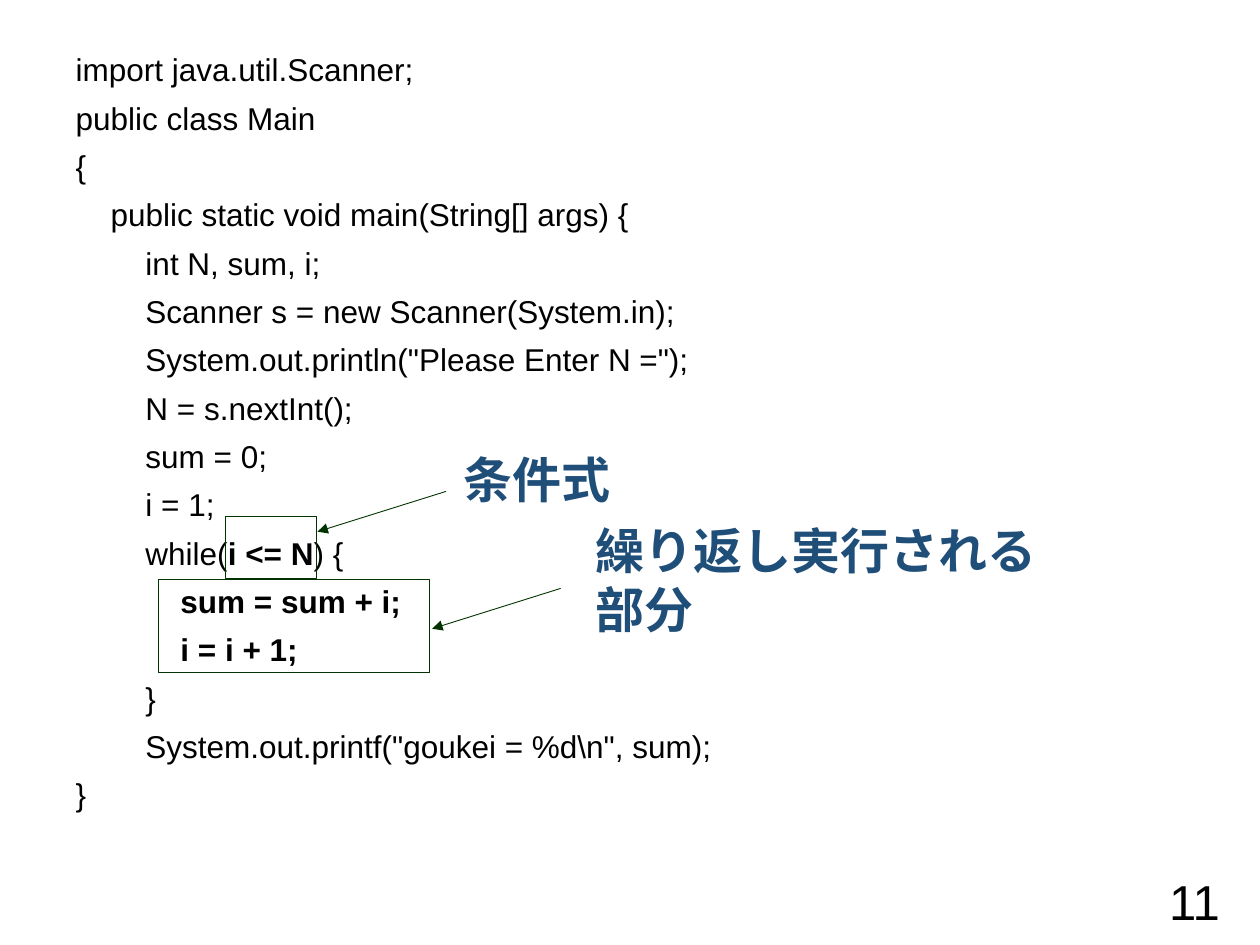
from pptx import Presentation
from pptx import util as u
from pptx.dml.color import RGBColor
from pptx.enum import shapes, text
from pptx.oxml.ns import qn
from lxml import etree

THEME = {
    "font": "Arial",
    "ink": RGBColor(0x00, 0x00, 0x00),
    "label": RGBColor(0x1F, 0x4E, 0x79),
    "frame": RGBColor(0x00, 0x33, 0x00),
    "code_size": u.Pt(18),
    "large_size": u.Pt(28),
    "line_width": u.Pt(0.5),
}


def add_run(paragraph, wording, size, color, bold=False):
    run = paragraph.add_run()
    run.text = wording
    run.font.name = THEME["font"]
    run.font.size = size
    run.font.bold = bold
    run.font.color.rgb = color


prs = Presentation()
prs.slide_width, prs.slide_height = u.Inches(10), u.Inches(7.5)
slide = prs.slides.add_slide(prs.slide_layouts[1])
unused_title = slide.shapes.title.element
unused_title.getparent().remove(unused_title)

# Program listing: each line is a list of (text, bold) runs
CODE = [
    [("import java.util.Scanner;", False)],
    [("public class Main", False)],
    [("{", False)],
    [("    public static void main(String[] args) {", False)],
    [("        int N, sum, i;", False)],
    [("        Scanner s = new Scanner(System.in);", False)],
    [("        System.out.println(\"Please Enter N =\");", False)],
    [("        N = s.nextInt();", False)],
    [("        sum = 0;", False)],
    [("        i = 1;", False)],
    [("        while(", False), ("i <= N", True), (") {", False)],
    [("            sum = sum + i;", True)],
    [("            i = i + 1;", True)],
    [("        }", False)],
    [("        System.out.printf(\"goukei = %d\\n\", sum);", False)],
    [("}", False)],
]
listing = slide.placeholders[1]
listing.left, listing.top = u.Inches(0.5), u.Inches(0.35)
listing.width, listing.height = u.Inches(9.25), u.Inches(5.83)
code_frame = listing.text_frame
code_frame.auto_size = text.MSO_AUTO_SIZE.NONE
code_frame.vertical_anchor = text.MSO_ANCHOR.TOP
for number, parts in enumerate(CODE):
    line = code_frame.add_paragraph() if number else code_frame.paragraphs[0]
    props = line._p.get_or_add_pPr()
    props.set("marL", "0")
    props.set("indent", "0")
    etree.SubElement(props, qn("a:buNone"))
    line.line_spacing = u.Pt(21.6)
    line.space_before = u.Pt(6 if number else 0)
    for wording, bold in parts:
        add_run(line, wording, THEME["code_size"], THEME["ink"], bold)

# Slide number
page = slide.shapes.add_textbox(u.Inches(7.53), u.Inches(6.95), u.Inches(2.25), u.Inches(0.4))
page.text_frame.word_wrap = True
page.text_frame.vertical_anchor = text.MSO_ANCHOR.MIDDLE
page_line = page.text_frame.paragraphs[0]
page_line.alignment = text.PP_ALIGN.RIGHT
add_run(page_line, "11", THEME["large_size"], THEME["ink"])

# Callouts: frame around the code, arrow to it, label
CALLOUTS = [
    ((1.26, 4.6, 2.15, 0.74), (4.45, 4.67, 3.43, 4.99),
     (4.63, 4.08, 3.74, 1.04), ["繰り返し実行される", "部分"]),
    ((1.79, 4.1, 0.72, 0.49), (3.54, 3.9, 2.52, 4.22),
     (3.58, 3.52, 1.37, 0.57), ["条件式"]),
]
for frame_at, arrow_at, label_at, wordings in CALLOUTS:
    frame = slide.shapes.add_shape(shapes.MSO_SHAPE.RECTANGLE, *map(u.Inches, frame_at))
    frame.shadow.inherit = False
    frame.fill.background()

    arrow = slide.shapes.add_connector(shapes.MSO_CONNECTOR.STRAIGHT, *map(u.Inches, arrow_at))
    for outline in (frame.line, arrow.line):
        outline.color.rgb = THEME["frame"]
        outline.width = THEME["line_width"]
    etree.SubElement(arrow.line._get_or_add_ln(), qn("a:tailEnd"), type="triangle")
    etree.SubElement(arrow._element.spPr, qn("a:effectLst"))

    label = slide.shapes.add_textbox(*map(u.Inches, label_at)).text_frame
    label.word_wrap = False
    for number, wording in enumerate(wordings):
        line = label.add_paragraph() if number else label.paragraphs[0]
        add_run(line, wording, THEME["large_size"], THEME["label"], bold=True)

prs.save("out.pptx")
